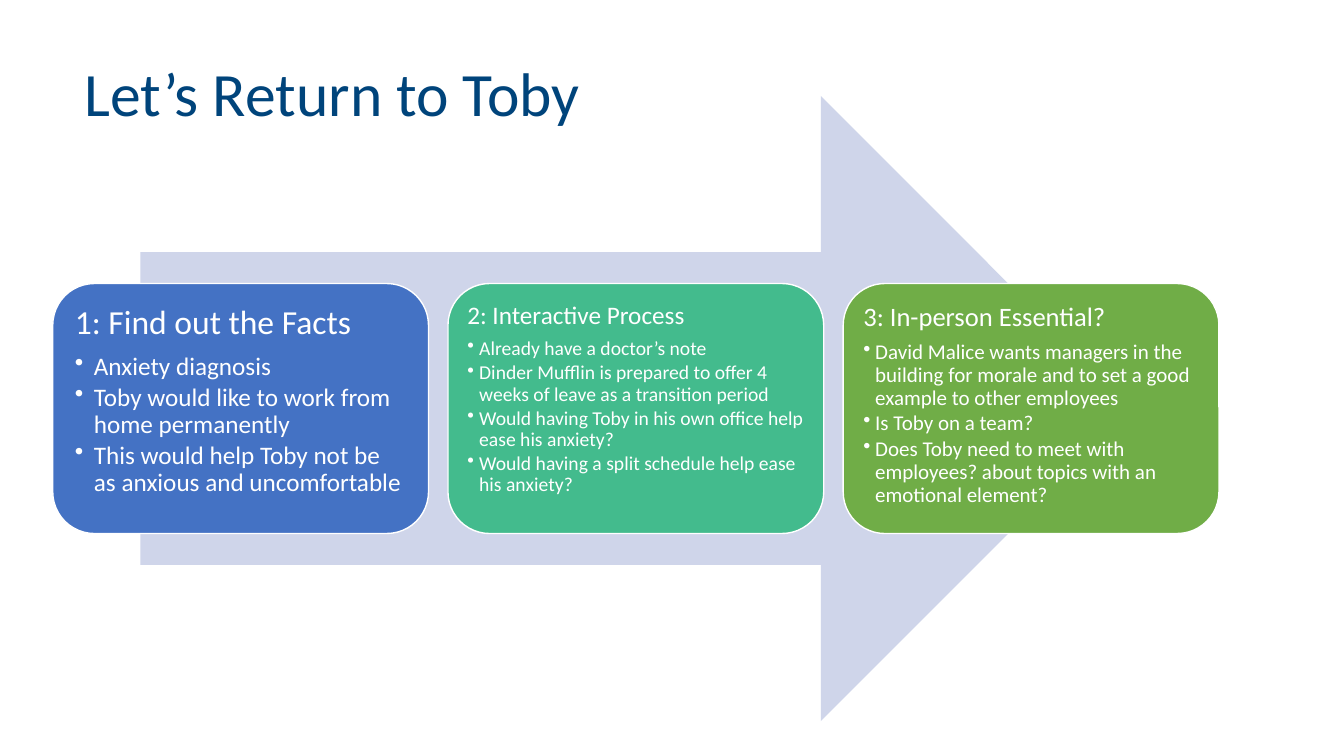
from dataclasses import dataclass

from lxml.etree import SubElement
from pptx import Presentation
from pptx.dml.color import RGBColor as RGB
from pptx.enum.shapes import MSO_SHAPE as SHAPE
from pptx.enum.text import MSO_ANCHOR as ANCHOR, PP_ALIGN as ALIGN
from pptx.oxml.ns import qn
from pptx.util import Cm, Pt


@dataclass(frozen=True)
class Theme:
    """Colours, font and type sizes of the slide."""
    font: str = "Calibri"
    title: RGB = RGB(0x00, 0x44, 0x7B)
    arrow: RGB = RGB(0xCF, 0xD5, 0xEA)
    white: RGB = RGB(0xFF, 0xFF, 0xFF)
    fills: tuple = (RGB(0x44, 0x72, 0xC4), RGB(0x43, 0xBB, 0x8D), RGB(0x70, 0xAD, 0x47))
    title_size: int = 44
    head_sizes: tuple = (24, 18, 19)
    bullet_sizes: tuple = (18, 14, 15)


THEME = Theme()
INSETS = (0.25, 0.18, 0.2)
INDENTS = (0.48, 0.3, 0.3)
STEPS = [
    ("1: Find out the Facts", [
        "Anxiety diagnosis",
        "Toby would like to work from home permanently",
        "This would help Toby not be as anxious and uncomfortable"]),
    ("2: Interactive Process", [
        "Already have a doctor’s note",
        "Dinder Mufflin is prepared to offer 4 weeks of leave as a transition period",
        "Would having Toby in his own office help ease his anxiety?",
        "Would having a split schedule help ease his anxiety?"]),
    ("3: In-person Essential?", [
        "David Malice wants managers in the building for morale and to set a good "
        "example to other employees",
        "Is Toby on a team?",
        "Does Toby need to meet with employees? about topics with an emotional element?"]),
]


def style(p, size, color, after=0):
    """Format a left-aligned paragraph and its runs."""
    p.alignment = ALIGN.LEFT
    p.line_spacing = 0.9
    p.space_after = Pt(round(size * after, 1))
    for r in p.runs:
        r.font.name = THEME.font
        r.font.size = Pt(size)
        r.font.color.rgb = color


def add_bullet(p, indent):
    """Give a paragraph a round bullet with a hanging indent."""
    pPr = p._p.get_or_add_pPr()
    pPr.set("marL", str(Cm(indent)))
    pPr.set("indent", str(-Cm(indent)))
    SubElement(pPr, qn("a:buChar")).set("char", "•")


def add_filled(s, kind, box, fill):
    """Add a flat preset shape without an outline."""
    sp = s.shapes.add_shape(kind, *map(Cm, box))
    sp.shadow.inherit = False
    sp.fill.solid()
    sp.fill.fore_color.rgb = fill
    sp.line.fill.background()
    return sp


def add_title(s, box, text):
    """Add the slide title."""
    tf = s.shapes.add_textbox(*map(Cm, box)).text_frame
    tf.word_wrap = True
    tf.vertical_anchor = ANCHOR.MIDDLE
    tf.text = text
    style(tf.paragraphs[0], THEME.title_size, THEME.title)


def add_card(s, box, i, head, bullets):
    """Add one rounded step card with a heading and bullets."""
    sp = add_filled(s, SHAPE.ROUNDED_RECTANGLE, box, THEME.fills[i])
    sp.line.color.rgb = THEME.white
    sp.line.width = Pt(1)
    tf = sp.text_frame
    tf.word_wrap = True
    tf.vertical_anchor = ANCHOR.TOP
    tf.margin_left = tf.margin_right = tf.margin_top = tf.margin_bottom = Cm(INSETS[i])
    tf.text = head
    style(tf.paragraphs[0], THEME.head_sizes[i], THEME.white, 0.35)
    for text in bullets:
        p = tf.add_paragraph()
        p.text = text
        style(p, THEME.bullet_sizes[i], THEME.white, 0.15)
        add_bullet(p, INDENTS[i])


def add_process(s, box):
    """Add the big arrow and the row of cards, centred on its height."""
    x, y, w, h = box
    add_filled(s, SHAPE.RIGHT_ARROW, (x + 2.21, y, 25.02, h), THEME.arrow)
    gap, card_h = 0.49, h * 0.4
    card_w = (w - gap * (len(STEPS) - 1)) / len(STEPS)
    for i, (head, bullets) in enumerate(STEPS):
        card = (x + i * (card_w + gap), y + (h - card_h) / 2, card_w, card_h)
        add_card(s, card, i, head, bullets)


def main():
    """Build and save the slide."""
    prs = Presentation()
    prs.slide_width, prs.slide_height = Cm(33.87), Cm(19.05)
    s = prs.slides.add_slide(prs.slide_layouts[6])
    add_process(s, (1.33, 2.42, 29.39, 15.75))
    add_title(s, (1.88, 1.02, 29.67, 2.82), "Let’s Return to Toby")
    prs.save("out.pptx")


if __name__ == "__main__":
    main()
